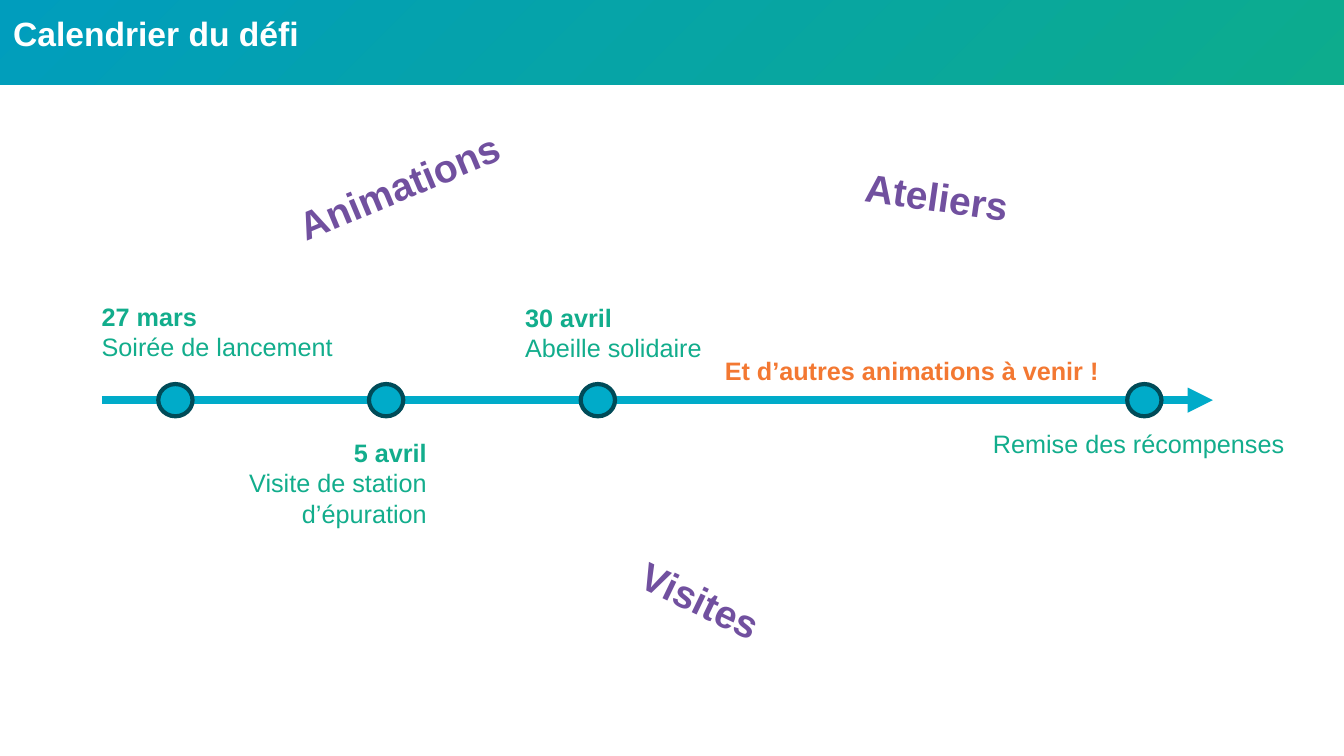
from pptx import Presentation, util as u
from pptx.dml.color import RGBColor
from pptx.enum import shapes, text
from pptx.oxml.ns import qn
from lxml import etree

PX = 9144
COLOURS = {
    "banner_start": "009DBD", "banner_end": "0DAC8D", "white": "FFFFFF",
    "axis": "00ABC9", "ring": "004B58", "event": "12AD8C",
    "teaser": "F37832", "theme": "71509F",
}
ALIGN = text.PP_ALIGN


def px(*lengths):
    """Turn whole pixels into EMU."""
    return [u.Emu(length * PX) for length in lengths]


def colour(name):
    """Look up a named colour."""
    return RGBColor.from_string(COLOURS[name])


def write(frame, lines, size=18, ink="event", bold=(False,), align=ALIGN.LEFT):
    """Fill a text frame with one paragraph per line, bold given per line."""
    frame.word_wrap = True
    frame.vertical_anchor = text.MSO_ANCHOR.TOP
    for index, (line, heavy) in enumerate(zip(lines, bold)):
        paragraph = frame.add_paragraph() if index else frame.paragraphs[0]
        paragraph.alignment = align
        run = paragraph.add_run()
        run.text = line
        run.font.name = "Arial"
        run.font.size = u.Pt(size)
        run.font.bold = heavy
        run.font.color.rgb = colour(ink)


class Timeline:
    """Draws the parts of a timeline on one slide."""

    def __init__(self, deck):
        """Add a title-only slide to the deck."""
        self.slide = deck.slides.add_slide(deck.slide_layouts[5])
        self.shapes = self.slide.shapes

    def banner(self, heading, width, height):
        """Format the title as a gradient banner."""
        title = self.shapes.title
        title.left, title.top, title.width, title.height = px(0, 0, width, height)
        title.fill.gradient()
        title.fill.gradient_angle = 315
        for stop, name in zip(title.fill.gradient_stops, ("banner_start", "banner_end")):
            stop.color.rgb = colour(name)
        frame = title.text_frame
        frame.auto_size = text.MSO_AUTO_SIZE.NONE
        inset, = px(13)
        frame.margin_left = frame.margin_right = inset
        frame.margin_top = frame.margin_bottom = inset
        write(frame, [heading], size=24, ink="white", bold=[True])

    def axis(self, start, end, y):
        """Draw the time arrow."""
        arrow = self.shapes.add_connector(shapes.MSO_CONNECTOR.STRAIGHT, *px(start, y, end, y))
        arrow.line.color.rgb = colour("axis")
        arrow.line.width = u.Pt(6)
        line = arrow.line._get_or_add_ln()
        etree.SubElement(line, qn("a:tailEnd"), type="triangle")
        etree.SubElement(arrow._element.spPr, qn("a:effectLst"))

    def milestone(self, x, y):
        """Draw a ringed dot with its top left corner at x, y."""
        dot = self.shapes.add_shape(shapes.MSO_SHAPE.OVAL, *px(x, y, 34, 32))
        dot.shadow.inherit = False
        dot.fill.solid()
        dot.fill.fore_color.rgb = colour("axis")
        dot.line.color.rgb = colour("ring")
        dot.line.width = u.Pt(3)

    def label(self, place, lines, angle=0, **style):
        """Add a text box, turned clockwise by angle."""
        box = self.shapes.add_textbox(*px(*place))
        box.rotation = angle
        write(box.text_frame, lines, **style)
        box.text_frame.auto_size = text.MSO_AUTO_SIZE.SHAPE_TO_FIT_TEXT


def main():
    """Build the challenge calendar."""
    deck = Presentation()
    deck.slide_width, deck.slide_height = px(1333, 750)
    calendar = Timeline(deck)
    calendar.banner("Calendrier du défi", 1333, 84)
    calendar.axis(101, 1203, 397)
    for x in (157, 366, 576, 1118):
        calendar.milestone(x, 381)

    events = [
        ((91, 294, 251, 71), ["27 mars", "Soirée de lancement"], ALIGN.LEFT),
        ((182, 429, 251, 101), ["5 avril", "Visite de station d’épuration"], ALIGN.RIGHT),
        ((511, 295, 251, 71), ["30 avril", "Abeille solidaire"], ALIGN.LEFT),
    ]
    for place, lines, align in events:
        calendar.label(place, lines, bold=(True, False), align=align)
    calendar.label((975, 420, 320, 40), ["Remise des récompenses"])
    calendar.label((709, 348, 397, 40), ["Et d’autres animations à venir !"],
                   ink="teaser", bold=[True])

    themes = [("Animations ", 230, 154, 337.4), ("Ateliers ", 764, 167, 8.2),
              ("Visites ", 529, 569, 25.7)]
    for theme, x, y, angle in themes:
        calendar.label((x, y, 341, 57), [theme], angle, size=28, ink="theme",
                       bold=[True], align=ALIGN.CENTER)
    deck.save("out.pptx")


if __name__ == "__main__":
    main()
